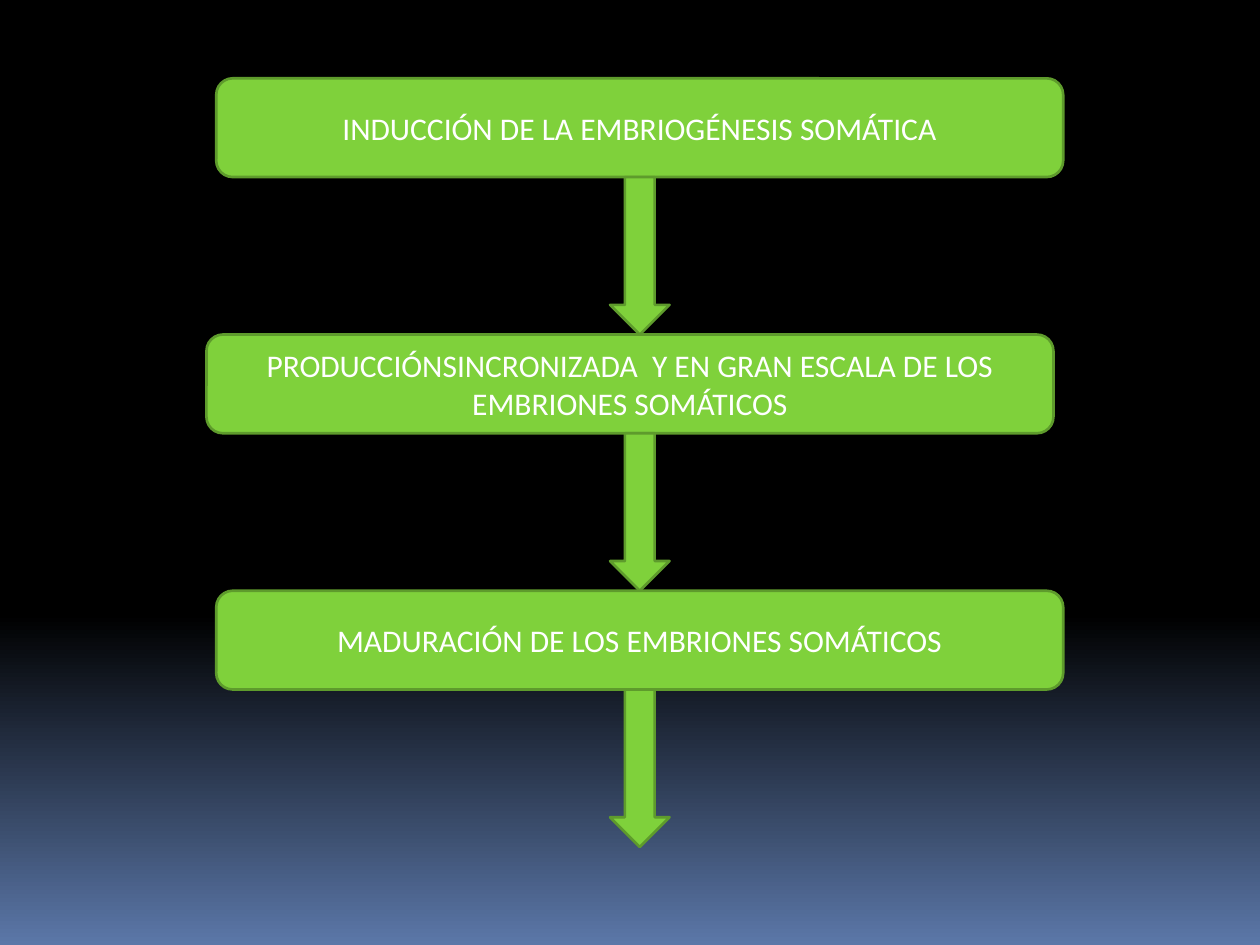
from copy import deepcopy

from pptx import Presentation
from pptx import util as u
from pptx.dml.color import RGBColor
from pptx.enum import shapes, text

GREEN = RGBColor(0x7F, 0xD1, 0x3B)
DARK_GREEN = RGBColor(0x5E, 0x9B, 0x2C)
WHITE = RGBColor(0xFF, 0xFF, 0xFF)
BLACK = RGBColor(0x00, 0x00, 0x00)
BLUE = RGBColor(0x5B, 0x77, 0xA8)

SLIDE_WIDTH, SLIDE_HEIGHT = 720, 540
BOX_WIDTH, BOX_HEIGHT = 484, 56.4
ARROW_WIDTH, ARROW_HEIGHT = 34, 90
FIRST_TOP = 44.8
ARROW_CENTER = 365.6
PAGE_CENTER = SLIDE_WIDTH / 2

STEPS = [
    (ARROW_CENTER, ["INDUCCIÓN DE LA EMBRIOGÉNESIS SOMÁTICA"]),
    (PAGE_CENTER, ["PRODUCCIÓNSINCRONIZADA  Y EN GRAN ESCALA DE LOS",
                   "EMBRIONES SOMÁTICOS"]),
    (ARROW_CENTER, ["MADURACIÓN DE LOS EMBRIONES SOMÁTICOS"]),
]


class FlowPage:
    font_format = {"name": "Calibri", "size": u.Pt(18)}
    frame_format = {"word_wrap": True, "vertical_anchor": text.MSO_ANCHOR.MIDDLE}

    def __init__(self, deck):
        self.page = deck.slides.add_slide(deck.slide_layouts[6])

    def apply(self, target, values):
        for name, value in values.items():
            setattr(target, name, value)

    def background(self, stops):
        fill = self.page.background.fill
        fill.gradient()
        fill.gradient_angle = 270
        stop_list = fill.gradient_stops[0]._gs.getparent()
        while len(stop_list) < len(stops):
            stop_list.append(deepcopy(stop_list[-1]))
        for stop, (position, color) in zip(fill.gradient_stops, stops):
            stop.position = position
            stop.color.rgb = color

    def shape(self, kind, center, top, width, height):
        shape = self.page.shapes.add_shape(
            kind, u.Pt(center - width / 2), u.Pt(top), u.Pt(width), u.Pt(height))
        shape.shadow.inherit = False
        shape.fill.solid()
        shape.fill.fore_color.rgb = GREEN
        shape.line.color.rgb = DARK_GREEN
        shape.line.width = u.Pt(1.5)
        return shape

    def box(self, center, top, lines):
        box = self.shape(shapes.MSO_SHAPE.ROUNDED_RECTANGLE, center, top,
                         BOX_WIDTH, BOX_HEIGHT)
        frame = box.text_frame
        self.apply(frame, self.frame_format)
        frame.text = "\n".join(lines)
        for para in frame.paragraphs:
            para.alignment = text.PP_ALIGN.CENTER
            for span in para.runs:
                self.apply(span.font, self.font_format)
                span.font.color.rgb = WHITE

    def arrow(self, center, top):
        self.shape(shapes.MSO_SHAPE.DOWN_ARROW, center, top,
                   ARROW_WIDTH, ARROW_HEIGHT)


def main():
    deck = Presentation()
    deck.slide_width, deck.slide_height = u.Pt(SLIDE_WIDTH), u.Pt(SLIDE_HEIGHT)
    flow = FlowPage(deck)
    flow.background([(0, BLACK), (0.65, BLACK), (1, BLUE)])
    for index, (center, lines) in enumerate(STEPS):
        top = FIRST_TOP + index * (BOX_HEIGHT + ARROW_HEIGHT)
        flow.box(center, top, lines)
        flow.arrow(ARROW_CENTER, top + BOX_HEIGHT)
    deck.save("out.pptx")


if __name__ == "__main__":
    main()
